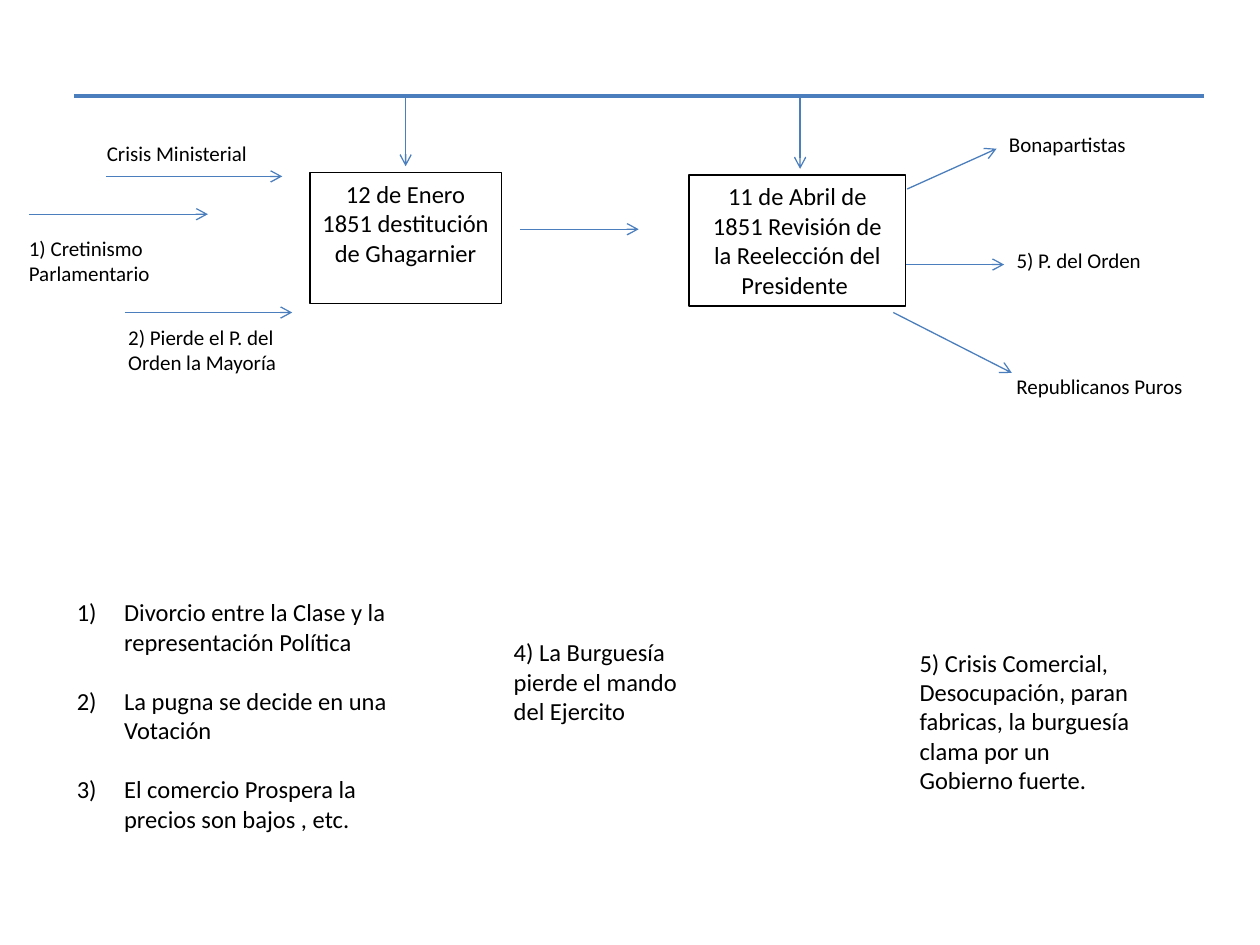
"""Build a one-slide timeline of the political crisis of 1851."""
from dataclasses import dataclass

from lxml.etree import SubElement
from pptx import Presentation
from pptx.dml.color import RGBColor
from pptx.enum.shapes import MSO_CONNECTOR, MSO_SHAPE
from pptx.enum.text import MSO_ANCHOR, MSO_AUTO_SIZE, PP_ALIGN
from pptx.oxml.ns import qn
from pptx.slide import Slide
from pptx.text.text import TextFrame
from pptx.util import Pt

BLACK = RGBColor(0x00, 0x00, 0x00)
BLUE = RGBColor(0x4B, 0x7E, 0xBC)
FONT = "Calibri"
LABEL_SIZE = 12
BODY_SIZE = 14
TIMELINE_Y = 54.7


@dataclass(frozen=True)
class Label:
    text: str
    left: float
    top: float
    width: float
    height: float
    size: int = LABEL_SIZE


@dataclass(frozen=True)
class Line:
    start: tuple[float, float]
    end: tuple[float, float]
    weight: float = 0.75
    arrow: bool = True


NOTES = [
    Label("Crisis Ministerial", 54, 77, 108, 21.6),
    Label("1) Cretinismo Parlamentario", 9.4, 131, 102.2, 36),
    Label("2) Pierde el P. del Orden la Mayoría", 66.2, 182, 111, 36),
    Label("Bonapartistas", 569.5, 71.5, 96.5, 21.6),
    Label("5) P. del Orden", 573.8, 138.2, 109.4, 21.6),
    Label("Republicanos Puros", 573.8, 210.2, 115.2, 21.6),
    Label("4) La Burguesía pierde el mando del Ejercito", 286.5, 360.7, 124.5, 58.3, BODY_SIZE),
    Label(
        "5) Crisis Comercial, Desocupación, paran fabricas, "
        "la burguesía clama por un Gobierno fuerte.",
        518.4, 366.5, 141.8, 92.2, BODY_SIZE,
    ),
]

EVENTS = [
    Label("12 de Enero 1851 destitución de Ghagarnier", 177.1, 98.6, 109.4, 74.9, BODY_SIZE),
    Label(
        "11 de Abril de 1851 Revisión de la Reelección del Presidente ",
        393.8, 100.1, 123.8, 74.9, BODY_SIZE,
    ),
]

LINES = [
    Line((42.5, TIMELINE_Y), (688.3, TIMELINE_Y), 2.25, False),
    Line((60.5, 100.8), (161.3, 100.8)),
    Line((16.6, 122.4), (118.8, 122.4)),
    Line((71.3, 178.6), (167, 178.6)),
    Line((297.4, 131), (365, 131)),
    Line((518.4, 108), (569.5, 85)),
    Line((517.7, 151.2), (573.8, 151.2)),
    Line((510.5, 178.6), (578.2, 213.1)),
    Line((231.8, TIMELINE_Y), (231.8, 95)),
    Line((457.2, TIMELINE_Y), (457.2, 96.5)),
]

CAUSES = [
    "Divorcio entre la Clase y la representación Política",
    "La pugna se decide en una Votación",
    "El comercio Prospera la precios son bajos , etc.",
]


def write(frame: TextFrame, texts: list[str], size: int, align: PP_ALIGN = PP_ALIGN.LEFT) -> None:
    frame.word_wrap = True
    frame.auto_size = MSO_AUTO_SIZE.NONE
    for index, text in enumerate(texts):
        para = frame.paragraphs[0] if index == 0 else frame.add_paragraph()
        para.text = text
        para.alignment = align
        para.font.name = FONT
        para.font.size = Pt(size)
        para.font.color.rgb = BLACK


def add_note(page: Slide, label: Label) -> None:
    box = page.shapes.add_textbox(Pt(label.left), Pt(label.top), Pt(label.width), Pt(label.height))
    write(box.text_frame, [label.text], label.size)


def add_event(page: Slide, label: Label) -> None:
    box = page.shapes.add_shape(
        MSO_SHAPE.RECTANGLE, Pt(label.left), Pt(label.top), Pt(label.width), Pt(label.height)
    )
    box.shadow.inherit = False
    box.fill.background()
    box.line.color.rgb = BLACK
    box.line.width = Pt(0.75)
    box.text_frame.vertical_anchor = MSO_ANCHOR.TOP
    write(box.text_frame, [label.text], label.size, PP_ALIGN.CENTER)


def add_line(page: Slide, line: Line) -> None:
    connector = page.shapes.add_connector(
        MSO_CONNECTOR.STRAIGHT, *(Pt(value) for value in line.start + line.end)
    )
    connector.line.color.rgb = BLUE
    connector.line.width = Pt(line.weight)
    if line.arrow:
        SubElement(connector.line._get_or_add_ln(), qn("a:tailEnd"), type="arrow")
    SubElement(connector._element.spPr, qn("a:effectLst"))


def add_causes(page: Slide) -> None:
    body = page.placeholders[1]
    body.left, body.top, body.width, body.height = Pt(36.7), Pt(337.7), Pt(215.3), Pt(143.3)
    frame = body.text_frame
    write(frame, CAUSES, BODY_SIZE)
    for index, para in enumerate(frame.paragraphs):
        properties = para._p.get_or_add_pPr()
        properties.set("marL", str(Pt(27)))
        properties.set("indent", str(Pt(-27)))
        numbering = SubElement(properties, qn("a:buAutoNum"), type="arabicParenR")
        properties.find(qn("a:defRPr")).addprevious(numbering)
        para.space_before = Pt(17 if index else 0)


def main() -> None:
    deck = Presentation()
    deck.slide_width, deck.slide_height = Pt(720), Pt(540)
    page = deck.slides.add_slide(deck.slide_layouts[1])
    title = page.shapes.title._element
    title.getparent().remove(title)
    add_causes(page)
    for note in NOTES:
        add_note(page, note)
    for event in EVENTS:
        add_event(page, event)
    for line in LINES:
        add_line(page, line)
    deck.save("out.pptx")


if __name__ == "__main__":
    main()
